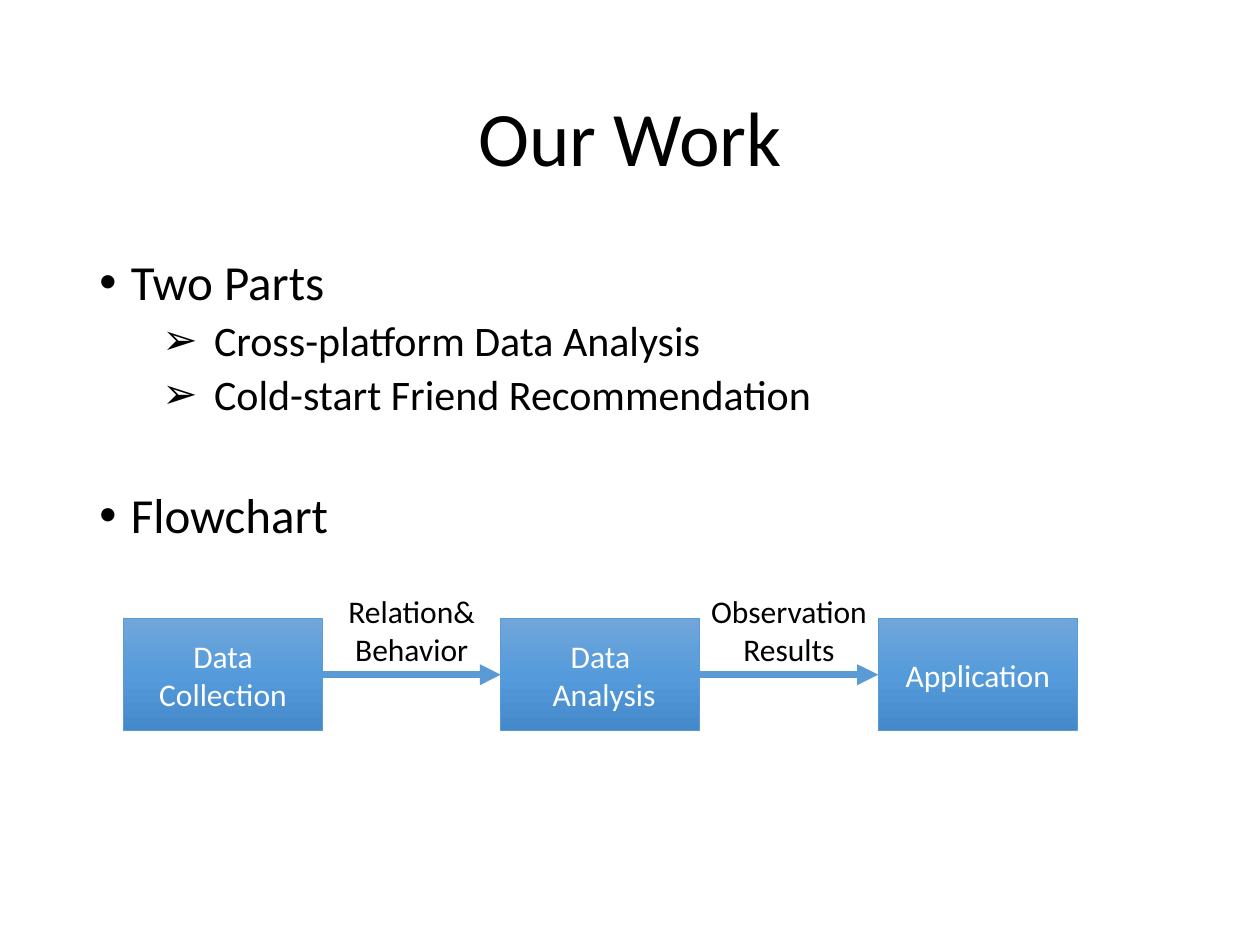
import copy

import pptx
import pptx.dml.color
import pptx.enum.dml
import pptx.enum.shapes
import pptx.enum.text
import pptx.oxml.ns
import pptx.util
from pptx.util import Inches

FONT = "Calibri"
BLACK, WHITE, BLUE = "000000", "FFFFFF", "5B9BD5"
GRADIENT = [(0, "71A6DB"), (0.5, "559BDB"), (1, "448ACA")]
ANCHOR = pptx.enum.text.MSO_ANCHOR
CENTER = pptx.enum.text.PP_ALIGN.CENTER


def color(hex_string):
    return pptx.dml.color.RGBColor.from_string(hex_string)


def add_child(parent, tag, **attributes):
    child = parent.makeelement(pptx.oxml.ns.qn(tag), attributes)
    parent.append(child)
    return child


def add_paragraph(frame, text, size, hex_string=BLACK, align=None):
    """Fill the empty first paragraph, or append a new one."""
    para = frame.paragraphs[0]
    if para.runs:
        para = frame.add_paragraph()
    para.alignment = align
    span = para.add_run()
    span.text = text
    span.font.name = FONT
    span.font.size = pptx.util.Pt(size)
    span.font.color.rgb = color(hex_string)
    return para


def add_text_frame(page, left, top, width, height, anchor=ANCHOR.TOP):
    box = page.shapes.add_textbox(left, top, width, height)
    frame = box.text_frame
    frame.word_wrap = True
    frame.vertical_anchor = anchor
    return frame


def add_title(page, left, top, width, height):
    frame = add_text_frame(page, left, top, width, height, ANCHOR.MIDDLE)
    add_paragraph(frame, "Our Work", 44, align=CENTER).line_spacing = 0.9


def add_bullets(page, left, top, width, height):
    # text, size, bullet, text indent, hanging indent, space before
    items = [
        ("Two Parts", 28, "•", 0.25, 0.25, 10),
        ("Cross-platform Data Analysis", 24, "➢", 0.91, 0.41, 5),
        ("Cold-start Friend Recommendation", 24, "➢", 0.91, 0.41, 5),
        ("Flowchart", 28, "•", 0.25, 0.25, 41),
    ]
    frame = add_text_frame(page, left, top, width, height)
    for text, size, bullet, indent, hanging, space in items:
        para = add_paragraph(frame, text, size)
        para.line_spacing = 0.9
        para.space_before = pptx.util.Pt(space)
        properties = para._p.get_or_add_pPr()
        properties.set("marL", str(Inches(indent)))
        properties.set("indent", str(-Inches(hanging)))
        add_child(properties, "a:buFont", typeface="Arial")
        add_child(properties, "a:buChar", char=bullet)


def fill_gradient(shape):
    shape.fill.gradient()
    shape.fill.gradient_angle = 270
    stop_list = shape._element.spPr.find(".//" + pptx.oxml.ns.qn("a:gsLst"))
    stop_list.insert(1, copy.deepcopy(stop_list[0]))
    for stop, (position, hex_string) in zip(shape.fill.gradient_stops, GRADIENT):
        stop.position = position
        stop.color.rgb = color(hex_string)


def add_step(page, lines, left, top, width, height):
    shape = page.shapes.add_shape(
        pptx.enum.shapes.MSO_SHAPE.RECTANGLE, left, top, width, height)
    shape.shadow.inherit = False
    fill_gradient(shape)
    shape.line.color.rgb = color(BLUE)
    shape.line.width = pptx.util.Pt(0.5)
    frame = shape.text_frame
    frame.word_wrap = True
    frame.vertical_anchor = ANCHOR.MIDDLE
    for line in lines:
        add_paragraph(frame, line, 18, WHITE, CENTER)
    return shape


def add_arrow(page, source, target):
    arrow = page.shapes.add_connector(
        pptx.enum.shapes.MSO_CONNECTOR.STRAIGHT, 0, 0, 0, 0)
    arrow.begin_connect(source, 3)
    arrow.end_connect(target, 1)
    arrow.line.color.rgb = color(BLUE)
    arrow.line.width = pptx.util.Pt(4)
    add_child(arrow.line._get_or_add_ln(), "a:tailEnd", type="triangle")
    add_child(arrow._element.spPr, "a:effectLst")


def add_flowchart(page, left, top, width, height):
    """Spread the steps over the width, with a labelled arrow in each gap."""
    step_lines = [["Data Collection"], ["Data", " Analysis"], ["Application"]]
    arrow_lines = [["Relation&", "Behavior"], ["Observation", "Results"]]
    step_width = Inches(1.58)
    pitch = (width - step_width) // (len(step_lines) - 1)
    steps = [add_step(page, lines, left + index * pitch, top, step_width, height)
             for index, lines in enumerate(step_lines)]

    label_width, label_height = Inches(1.57), Inches(0.71)
    for index, lines in enumerate(arrow_lines):
        add_arrow(page, steps[index], steps[index + 1])
        middle = left + index * pitch + (pitch + step_width) // 2
        frame = add_text_frame(page, middle - label_width // 2, top - Inches(0.26),
                               label_width, label_height)
        for line in lines:
            add_paragraph(frame, line, 18, align=CENTER)


def main():
    deck = pptx.Presentation()
    deck.slide_width, deck.slide_height = Inches(10), Inches(7.5)
    page = deck.slides.add_slide(deck.slide_layouts[6])
    add_title(page, Inches(0.69), Inches(0.4), Inches(8.62), Inches(1.45))
    add_bullets(page, Inches(0.69), Inches(2), Inches(8.62), Inches(4.76))
    add_flowchart(page, Inches(0.98), Inches(4.91), Inches(7.57), Inches(0.89))
    deck.save("out.pptx")


if __name__ == "__main__":
    main()
